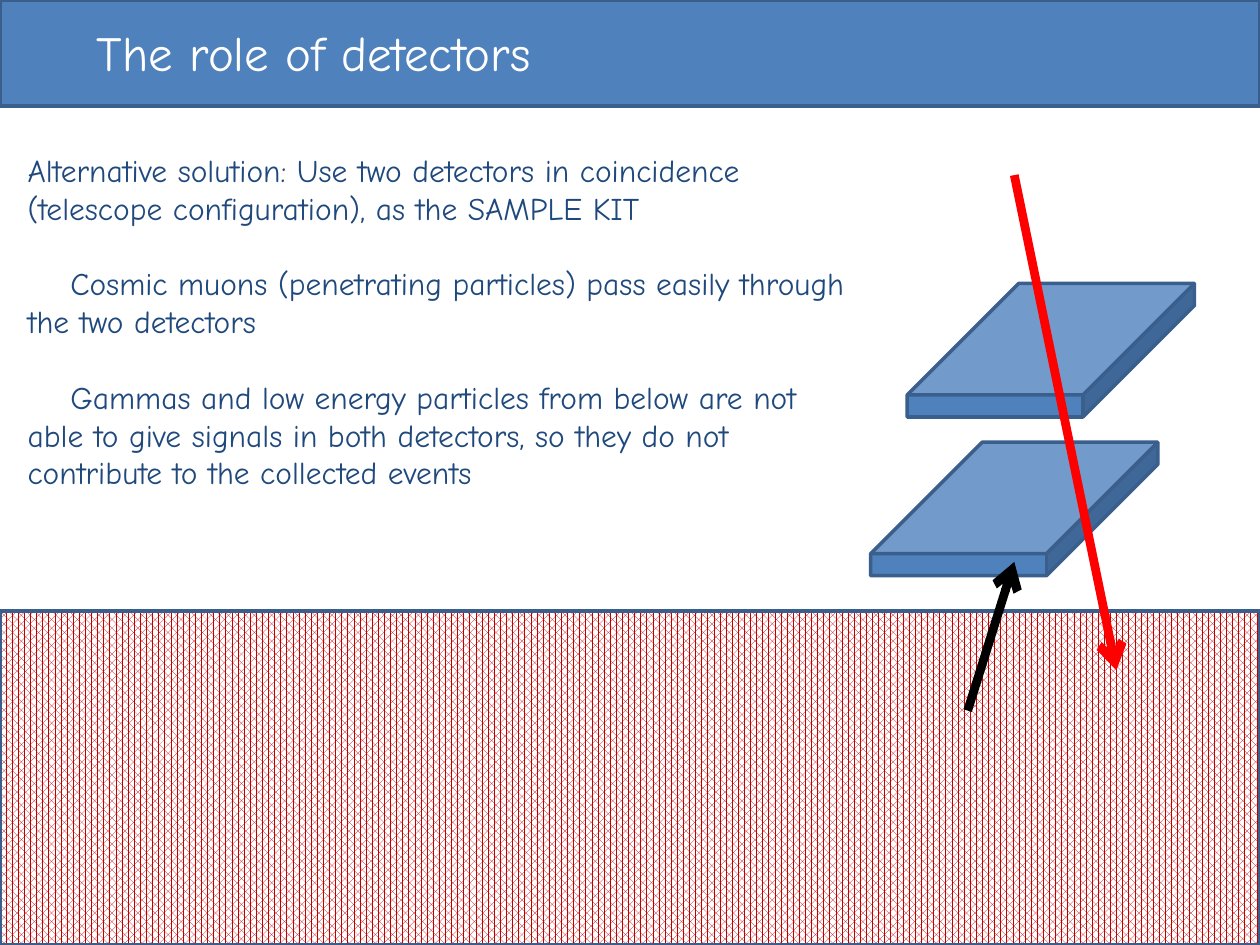
from lxml import etree
from pptx import Presentation
from pptx.dml.color import RGBColor
from pptx.enum.dml import MSO_PATTERN
from pptx.enum.shapes import MSO_CONNECTOR, MSO_SHAPE
from pptx.enum.text import MSO_AUTO_SIZE
from pptx.oxml.ns import qn
from pptx.util import Inches, Pt

THEME = {
    "font": "Comic Neue",
    "title_size": 28,
    "body_size": 18,
    "paragraph_gap": 21.6,
    "white": "FFFFFF",
    "text": "1F497D",
    "blue": "4F81BD",
    "outline": "3A5F8C",
    "ground": "C00000",
    "muon": "FF0000",
    "gamma": "000000",
    "outline_width": 2,
    "arrow_width": 5,
}
TITLE = "The role of detectors"
INTRO = (
    "Alternative solution: Use two detectors in coincidence "
    "(telescope configuration), as the SAMPLE KIT"
)
POINTS = [
    "Cosmic muons (penetrating particles) pass easily through the two detectors",
    "Gammas and low energy particles from below are not able to give signals "
    "in both detectors, so they do not contribute to the collected events",
]
POINT_INDENT = 0.34
WIDTH, HEIGHT = 10, 7.5
HEADER_HEIGHT = 0.84
GROUND_TOP = 4.85
DETECTOR_SIZE = (2.28, 1.06)
DETECTOR_DEPTH = 0.835
LOWER_DETECTOR = (6.91, 3.51)
UPPER_DETECTOR = (7.2, 2.25)
GAMMA_PATH = ((7.68, 5.64), (8.05, 4.46))
MUON_PATH = ((8.05, 1.39), (8.86, 5.32))


def color(name):
    return RGBColor.from_string(THEME[name])


def add_block(slide, kind, left, top, width, height):
    shape = slide.shapes.add_shape(
        kind, Inches(left), Inches(top), Inches(width), Inches(height)
    )
    shape.shadow.inherit = False
    shape.fill.solid()
    shape.fill.fore_color.rgb = color("blue")
    shape.line.color.rgb = color("outline")
    shape.line.width = Pt(THEME["outline_width"])
    return shape


def add_ground(slide):
    ground = add_block(
        slide, MSO_SHAPE.RECTANGLE, 0, GROUND_TOP, WIDTH, HEIGHT - GROUND_TOP
    )
    ground.fill.patterned()
    ground.fill.pattern = MSO_PATTERN.PERCENT_70
    ground.fill.fore_color.rgb = color("ground")
    ground.fill.back_color.rgb = color("white")


def add_detector(slide, position):
    detector = add_block(slide, MSO_SHAPE.CUBE, *position, *DETECTOR_SIZE)
    detector.adjustments[0] = DETECTOR_DEPTH


def add_text(slide, box, texts, size, color_name):
    frame = slide.shapes.add_textbox(*map(Inches, box)).text_frame
    frame.word_wrap = True
    frame.auto_size = MSO_AUTO_SIZE.SHAPE_TO_FIT_TEXT
    for index, text in enumerate(texts):
        paragraph = frame.add_paragraph() if index else frame.paragraphs[0]
        if index:
            paragraph.space_before = Pt(THEME["paragraph_gap"])
            properties = paragraph._p.get_or_add_pPr()
            properties.set("marL", "0")
            properties.set("indent", str(Inches(POINT_INDENT)))
        run = paragraph.add_run()
        run.text = text
        run.font.name = THEME["font"]
        run.font.size = Pt(THEME[size])
        run.font.color.rgb = color(color_name)


def add_arrow(slide, start, end, color_name):
    arrow = slide.shapes.add_connector(
        MSO_CONNECTOR.STRAIGHT, *map(Inches, start + end)
    )
    arrow.line.color.rgb = color(color_name)
    arrow.line.width = Pt(THEME["arrow_width"])
    etree.SubElement(arrow.line._get_or_add_ln(), qn("a:tailEnd"), type="arrow")
    etree.SubElement(arrow._element.spPr, qn("a:effectLst"))


def main():
    presentation = Presentation()
    presentation.slide_width = Inches(WIDTH)
    presentation.slide_height = Inches(HEIGHT)
    slide = presentation.slides.add_slide(presentation.slide_layouts[6])

    add_block(slide, MSO_SHAPE.RECTANGLE, 0, 0, WIDTH, HEADER_HEIGHT)
    add_text(slide, (0.67, 0.13, 8.82, 0.57), [TITLE], "title_size", "white")
    add_text(slide, (0.12, 1.15, 6.79, 3.13), [INTRO, *POINTS], "body_size", "text")
    add_ground(slide)
    add_detector(slide, LOWER_DETECTOR)
    add_arrow(slide, *GAMMA_PATH, "gamma")
    add_detector(slide, UPPER_DETECTOR)
    add_arrow(slide, *MUON_PATH, "muon")

    presentation.save("out.pptx")


if __name__ == "__main__":
    main()
